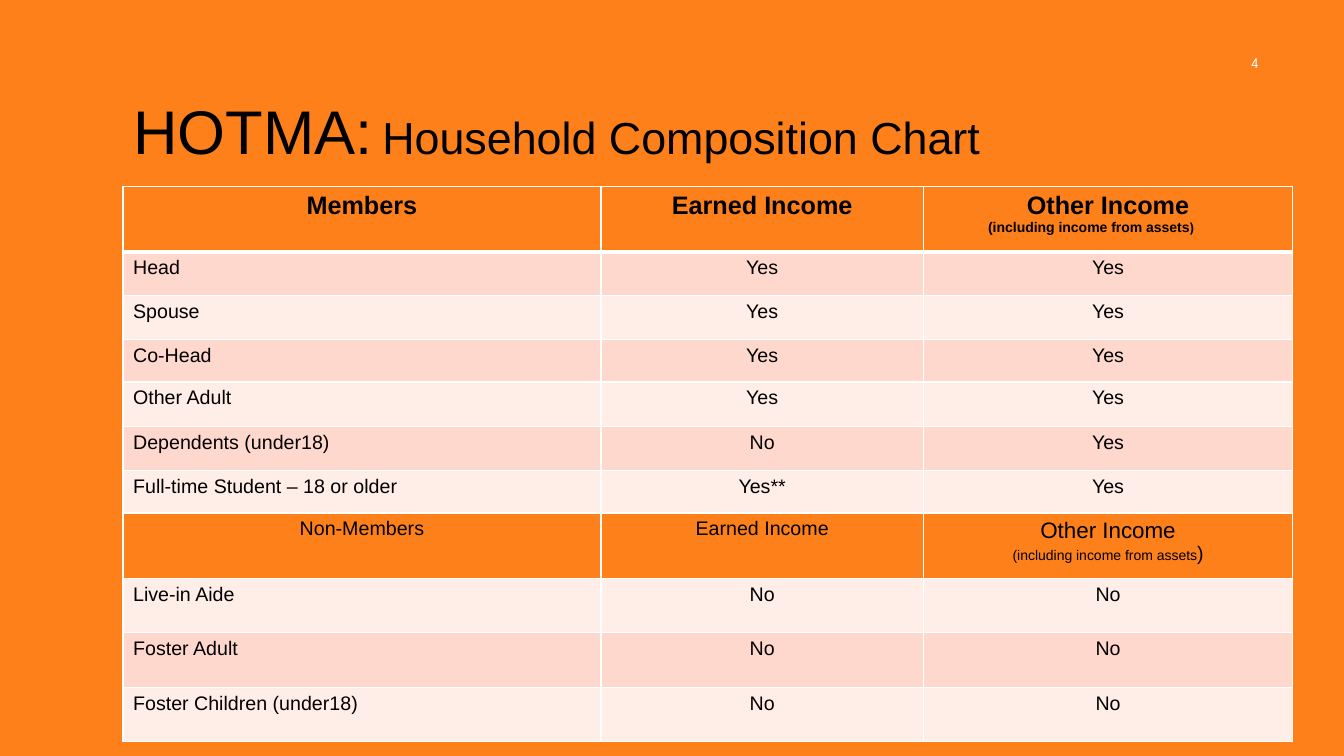
from lxml.etree import SubElement
from pptx import Presentation
from pptx.dml.color import RGBColor
from pptx.enum.text import MSO_ANCHOR, MSO_AUTO_SIZE, PP_ALIGN
from pptx.oxml.ns import qn
from pptx.util import Emu, Pt

EMU_PER_PX = 9144
COLORS = {"orange": "FE801A", "rose": "FFD8CD", "blush": "FFEDE8",
          "black": "000000", "white": "FFFFFF"}
BODY_FONT, NUMBER_FONT = "Arial", "League Spartan"
COLUMN_WIDTHS = [474, 320, 366]
NOTE_INDENT = 54

INCOME_NOTE = "(including income from assets"
MEMBER_HEADINGS = ["Members", "Earned Income", "Other Income"]
NON_MEMBER_HEADINGS = ["Non-Members", "Earned Income", "Other Income"]
# Row height, fill and the three cell texts
ROWS = [
    (65, "orange", MEMBER_HEADINGS),
    (43, "rose", ["Head", "Yes", "Yes"]),
    (44, "blush", ["Spouse", "Yes", "Yes"]),
    (42, "rose", ["Co-Head", "Yes", "Yes"]),
    (44, "blush", ["Other Adult", "Yes", "Yes"]),
    (44, "rose", ["Dependents (under18)", "No", "Yes"]),
    (42, "blush", ["Full-time Student – 18 or older", "Yes**", "Yes"]),
    (65, "orange", NON_MEMBER_HEADINGS),
    (54, "blush", ["Live-in Aide", "No", "No"]),
    (54, "rose", ["Foster Adult", "No", "No"]),
    (54, "blush", ["Foster Children (under18)", "No", "No"]),
]


def px(length):
    return Emu(length * EMU_PER_PX)


def rgb(name):
    return RGBColor.from_string(COLORS[name])


class SlideBuilder:
    def __init__(self, deck):
        self.slide = deck.slides.add_slide(deck.slide_layouts[5])
        background = self.slide.background.fill
        background.solid()
        background.fore_color.rgb = rgb("orange")

    def place(self, shape, left, top, width, height):
        frame = {"left": left, "top": top, "width": width, "height": height}
        for name, value in frame.items():
            setattr(shape, name, px(value))

    def add_spans(self, para, spans, align=PP_ALIGN.LEFT, color="black"):
        """Add (text, format) spans to a paragraph."""
        para.alignment = align
        for text, style in spans:
            span = para.add_run()
            span.text = text
            values = {"name": BODY_FONT, "bold": False} | style
            values["size"] = Pt(values["size"])
            for name, value in values.items():
                setattr(span.font, name, value)
            span.font.color.rgb = rgb(color)

    def title(self, spans, frame):
        title = self.slide.shapes.title
        self.place(title, *frame)
        title.text_frame.word_wrap = True
        title.text_frame.vertical_anchor = MSO_ANCHOR.TOP
        title.text_frame.auto_size = MSO_AUTO_SIZE.SHAPE_TO_FIT_TEXT
        para = title.text_frame.paragraphs[0]
        para.line_spacing = 1.07
        para.space_after = Pt(8)
        self.add_spans(para, spans)

    def page_number(self, number, frame):
        box = self.slide.shapes.add_textbox(*map(px, frame))
        box.text_frame.word_wrap = True
        box.text_frame.vertical_anchor = MSO_ANCHOR.MIDDLE
        self.add_spans(box.text_frame.paragraphs[0],
                       [(number, {"size": 10.5, "name": NUMBER_FONT})],
                       PP_ALIGN.RIGHT, "white")

    def borders(self, cell, top=1, bottom=1):
        """Draw white cell borders; widths are in points."""
        properties = cell._tc.get_or_add_tcPr()
        sides = {"lnL": 1, "lnR": 1, "lnT": top, "lnB": bottom}
        for index, (side, width) in enumerate(sides.items()):
            line = SubElement(properties, qn(f"a:{side}"), w=str(Pt(width)))
            fill = SubElement(line, qn("a:solidFill"))
            SubElement(fill, qn("a:srgbClr"), val=COLORS["white"])
            properties.insert(index, line)

    def table(self, rows, left, top):
        height = sum(row[0] for row in rows)
        frame = (left, top, sum(COLUMN_WIDTHS), height)
        table = self.slide.shapes.add_table(
            len(rows), len(COLUMN_WIDTHS), *map(px, frame)).table
        table.first_row = table.horz_banding = False
        for column, width in zip(table.columns, COLUMN_WIDTHS):
            column.width = px(width)
        for row_index, (height, fill, texts) in enumerate(rows):
            table.rows[row_index].height = px(height)
            for column_index, text in enumerate(texts):
                cell = table.cell(row_index, column_index)
                cell.fill.solid()
                cell.fill.fore_color.rgb = rgb(fill)
                self.borders(cell, top=3 if row_index == 1 else 1,
                             bottom=3 if row_index == 0 else 1)
                self.cell_text(cell, text, is_heading=fill == "orange",
                               is_first=row_index == 0,
                               is_label=column_index == 0)

    def cell_text(self, cell, text, is_heading, is_first, is_label):
        has_note = is_heading and text == "Other Income"
        size = 18 if is_first else 16 if has_note else 14
        align = PP_ALIGN.LEFT if is_label and not is_heading else PP_ALIGN.CENTER
        self.add_spans(cell.text_frame.paragraphs[0],
                       [(text, {"size": size, "bold": is_first})], align)
        if not has_note:
            return
        note = cell.text_frame.add_paragraph()
        closing = {"size": 10, "name": NUMBER_FONT} if is_first else {"size": 14}
        self.add_spans(note, [(INCOME_NOTE, {"size": 10, "bold": is_first}),
                              (")", closing | {"bold": is_first})],
                       PP_ALIGN.LEFT if is_first else PP_ALIGN.CENTER)
        if is_first:
            note._p.get_or_add_pPr().set("marL", str(px(NOTE_INDENT)))


def main():
    deck = Presentation()
    deck.slide_width, deck.slide_height = px(1333), px(750)
    builder = SlideBuilder(deck)
    builder.page_number("4", (958, 42, 300, 40))
    builder.table(ROWS, 122, 185)
    builder.title([("HOTMA:", {"size": 44}), (" ", {"size": 24}),
                   ("Household Composition Chart", {"size": 32})],
                  (122, 82, 1057, 84))
    deck.save("out.pptx")


if __name__ == "__main__":
    main()
